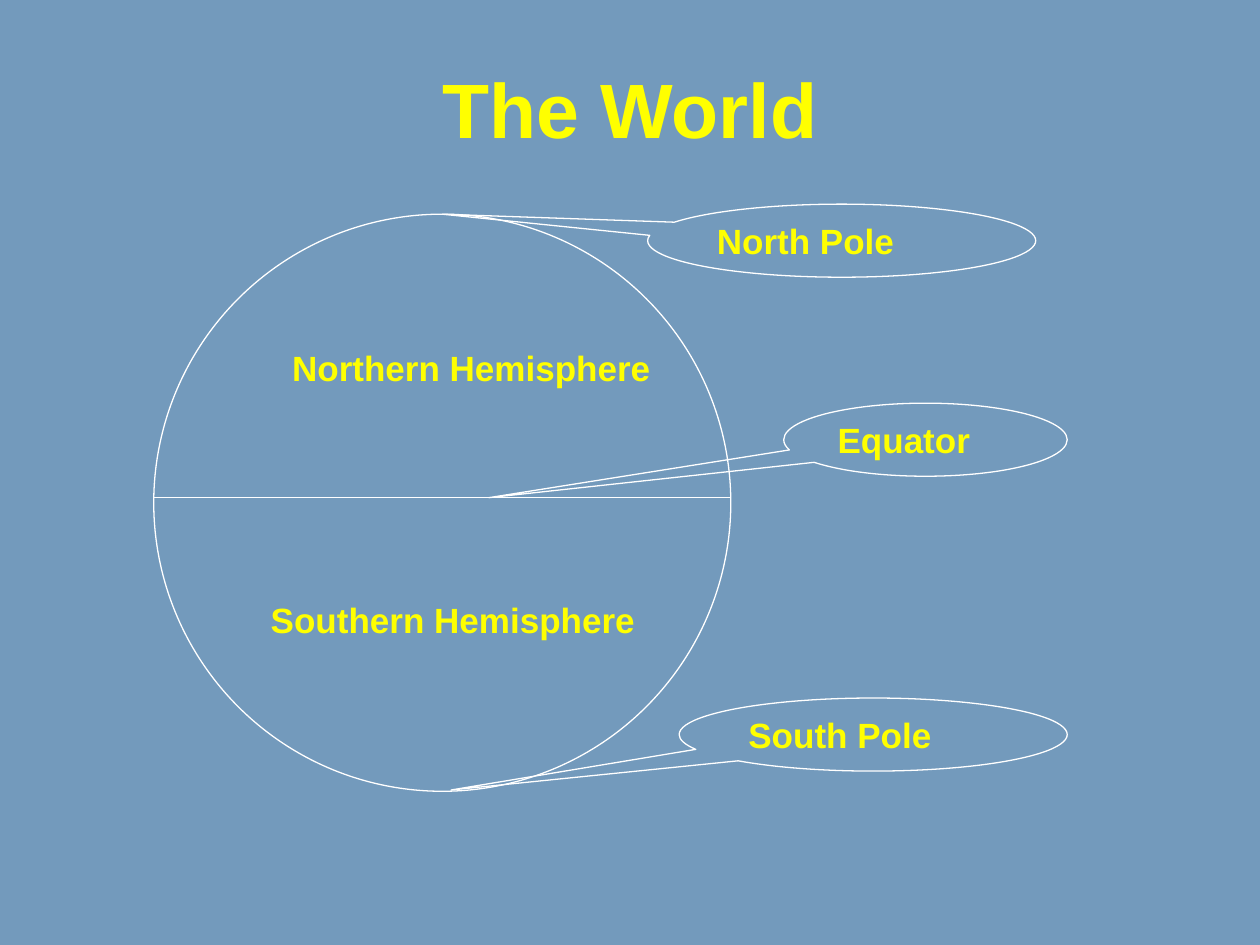
import dataclasses

import pptx
import pptx.dml.color
import pptx.enum.shapes
import pptx.enum.text
import pptx.util
from pptx.util import Inches

SHAPE = pptx.enum.shapes.MSO_SHAPE
ALIGN = pptx.enum.text.PP_ALIGN
ANCHOR = pptx.enum.text.MSO_ANCHOR


@dataclasses.dataclass(frozen=True)
class Theme:
    background: str = "739ABC"
    line: str = "FFFFFF"
    text: str = "FFFF00"
    font: str = "Arial"
    title_size: int = 44
    label_size: int = 20
    line_width: float = 0.75


THEME = Theme()


def rgb(value):
    return pptx.dml.color.RGBColor.from_string(value)


def style_line(line):
    line.color.rgb = rgb(THEME.line)
    line.width = pptx.util.Pt(THEME.line_width)


def write(tf, text, size, align=ALIGN.LEFT):
    tf.text = text
    p = tf.paragraphs[0]
    p.alignment = align
    font = p.runs[0].font
    font.name, font.size, font.bold = THEME.font, pptx.util.Pt(size), True
    font.color.rgb = rgb(THEME.text)
    return p


def add_outline(s, kind, box):
    sp = s.shapes.add_shape(kind, *map(Inches, box))
    sp.shadow.inherit = False
    sp.fill.background()
    style_line(sp.line)
    return sp


def add_label(s, box, text, size=THEME.label_size, align=ALIGN.LEFT):
    tf = s.shapes.add_textbox(*map(Inches, box)).text_frame
    tf.word_wrap = False
    tf.auto_size = pptx.enum.text.MSO_AUTO_SIZE.SHAPE_TO_FIT_TEXT
    return write(tf, text, size, align)


def add_globe(s, box, equator_y):
    left, _, width, _ = box
    add_outline(s, SHAPE.OVAL, box)
    equator = s.shapes.add_connector(
        pptx.enum.shapes.MSO_CONNECTOR.STRAIGHT,
        Inches(left), Inches(equator_y), Inches(left + width), Inches(equator_y))
    style_line(equator.line)
    equator._element.spPr.append(pptx.oxml.xmlchemy.OxmlElement("a:effectLst"))


def add_callout(s, box, text, tip):
    """Oval callout whose tail ends at the point tip."""
    left, top, width, height = box
    sp = add_outline(s, SHAPE.OVAL_CALLOUT, box)
    sp.adjustments[0] = (tip[0] - left) / width - 0.5
    sp.adjustments[1] = (tip[1] - top) / height - 0.5
    sp.text_frame.vertical_anchor = ANCHOR.MIDDLE
    write(sp.text_frame, text, THEME.label_size)


def main():
    prs = pptx.Presentation()
    prs.slide_width, prs.slide_height = Inches(10), Inches(7.5)
    s = prs.slides.add_slide(prs.slide_layouts[6])
    s.background.fill.solid()
    s.background.fill.fore_color.rgb = rgb(THEME.background)

    # Globe with its equator
    equator_y = 3.95
    add_globe(s, (1.22, 1.7, 4.58, 4.58), equator_y)

    # Callouts: box, text, tail tip
    for box, text, tip in (
        ((5.14, 1.62, 3.08, 0.58), "North Pole", (3.51, 1.7)),
        ((5.39, 5.54, 3.08, 0.58), "South Pole", (3.58, 6.27)),
        ((6.22, 3.2, 2.25, 0.58), "Equator", (3.88, equator_y)),
    ):
        add_callout(s, box, text, tip)

    # Hemisphere names
    add_label(s, (2.22, 2.7, 3.07, 0.44), "Northern Hemisphere")
    add_label(s, (2.05, 4.7, 3.12, 0.44), "Southern Hemisphere")

    # Title
    p = add_label(s, (3.39, 0.52, 3.22, 0.77), "The World", THEME.title_size, ALIGN.CENTER)
    p.line_spacing = 0.9

    prs.save("out.pptx")


if __name__ == "__main__":
    main()
